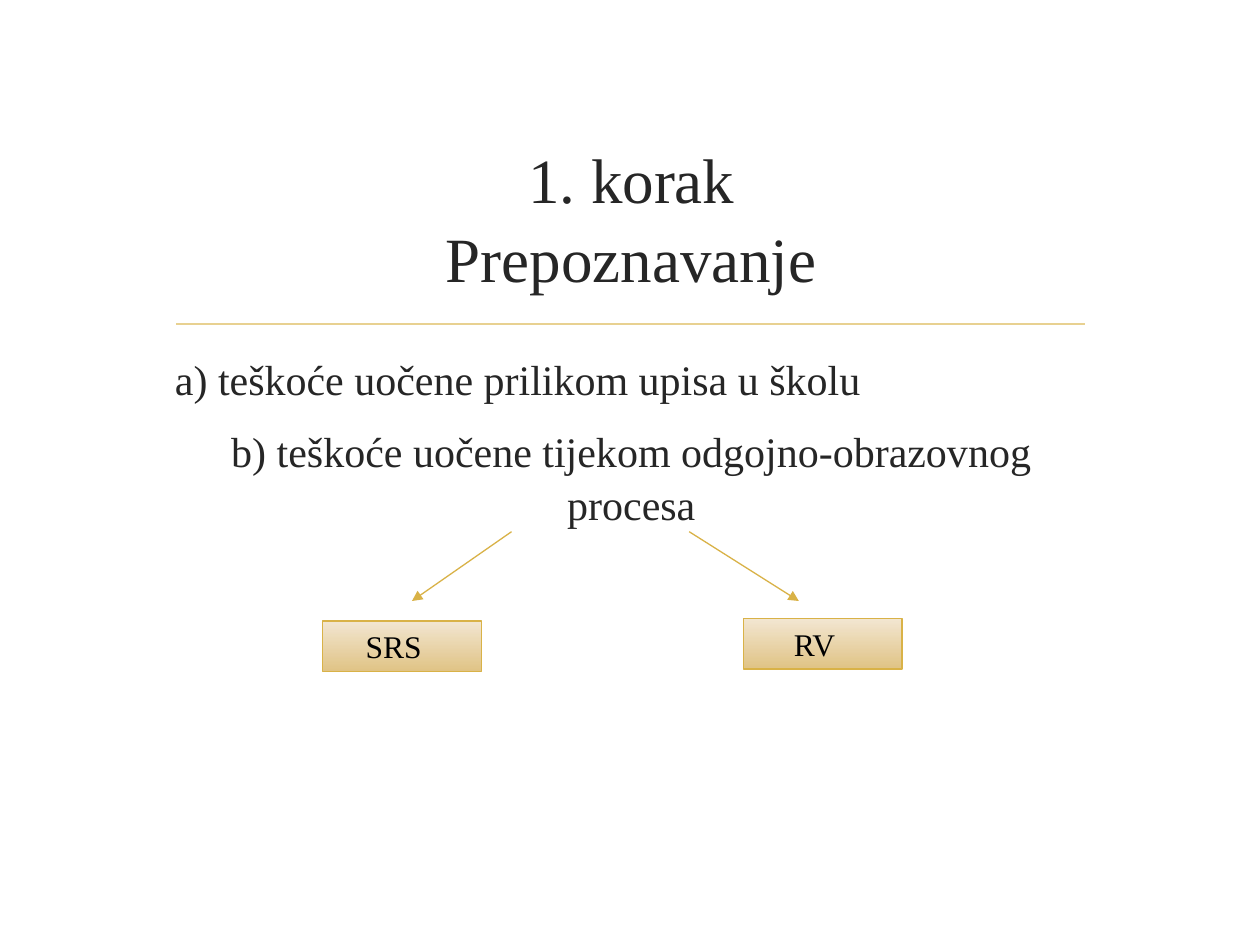
"""Builds a slide on step one, recognising difficulties, with two labelled branches."""
from lxml import etree
from pptx import Presentation
from pptx.dml.color import RGBColor
from pptx.enum.shapes import MSO_CONNECTOR, MSO_SHAPE
from pptx.enum.text import MSO_ANCHOR, PP_ALIGN
from pptx.oxml.ns import qn
from pptx.util import Inches, Pt

LEFT, CENTER = PP_ALIGN.LEFT, PP_ALIGN.CENTER
TOP, MIDDLE = MSO_ANCHOR.TOP, MSO_ANCHOR.MIDDLE
STRAIGHT, RECT = MSO_CONNECTOR.STRAIGHT, MSO_SHAPE.RECTANGLE

FONT = "Times New Roman"
COLORS = {"text": "262626", "label": "000000", "rule": "E8D191",
          "gold": "D9B247", "light": "F2E6D1", "dark": "E0C385"}

TITLE = [("1. korak\vPrepoznavanje", CENTER)]
BODY = [("a) teškoće uočene prilikom upisa u školu", LEFT),
        ("b) teškoće uočene tijekom odgojno-obrazovnog procesa", CENTER)]
RULE = ((1.4, 2.57), (8.61, 2.57))
ARROWS = [((4.06, 4.22), (3.27, 4.77)), ((5.47, 4.22), (6.34, 4.77))]
LABELS = [("SRS", 2.56, 4.93), ("RV", 5.9, 4.91)]
LABEL_W, LABEL_H = 1.26, 0.4


def rgb(name):
    return RGBColor.from_string(COLORS[name])


def write(shape, paras, size, color="text", anchor=TOP, gap=0, after=0,
          spacing=1.0, right=0.1):
    frame = shape.text_frame
    frame.word_wrap = True
    frame.vertical_anchor = anchor
    frame.margin_right = Inches(right)
    for i, (text, align) in enumerate(paras):
        para = frame.paragraphs[0] if i == 0 else frame.add_paragraph()
        para.text = text
        para.alignment = align
        para.line_spacing = spacing
        para.space_before = Pt(gap if i else 0)
        para.space_after = Pt(after)
        para.font.name = FONT
        para.font.size = Pt(size)
        para.font.color.rgb = rgb(color)


def box(slide, *place):
    return slide.shapes.add_textbox(*map(Inches, place))


def line(slide, ends, color, width, arrow=False):
    start, end = ends
    link = slide.shapes.add_connector(STRAIGHT, *map(Inches, start + end))
    link.line.color.rgb = rgb(color)
    link.line.width = Pt(width)
    if arrow:
        etree.SubElement(link.line._get_or_add_ln(), qn("a:tailEnd"), type="triangle")
    etree.SubElement(link._element.spPr, qn("a:effectLst"))


def label(slide, text, x, y):
    shape = slide.shapes.add_shape(RECT, *map(Inches, (x, y, LABEL_W, LABEL_H)))
    shape.shadow.inherit = False
    shape.fill.gradient()
    shape.fill.gradient_angle = 270
    for stop, name, at in zip(shape.fill.gradient_stops, ("light", "dark"), (0, 1)):
        stop.color.rgb = rgb(name)
        stop.position = at
    shape.line.color.rgb = rgb("gold")
    shape.line.width = Pt(0.75)
    write(shape, [(text, CENTER)], 18, color="label", anchor=MIDDLE, right=0.23)


def main():
    deck = Presentation()
    deck.slide_width, deck.slide_height = Inches(10), Inches(7.5)
    slide = deck.slides.add_slide(deck.slide_layouts[6])
    line(slide, RULE, "rule", 1.25)
    write(box(slide, 1.29, 1, 7.44, 1.43), TITLE, 36, anchor=MIDDLE, spacing=1.04)
    write(box(slide, 1.29, 2.74, 7.44, 3.75), BODY, 24, gap=4.8, after=6, spacing=1.05)
    for ends in ARROWS:
        line(slide, ends, "gold", 0.75, arrow=True)
    for item in LABELS:
        label(slide, *item)
    deck.save("out.pptx")


if __name__ == "__main__":
    main()
